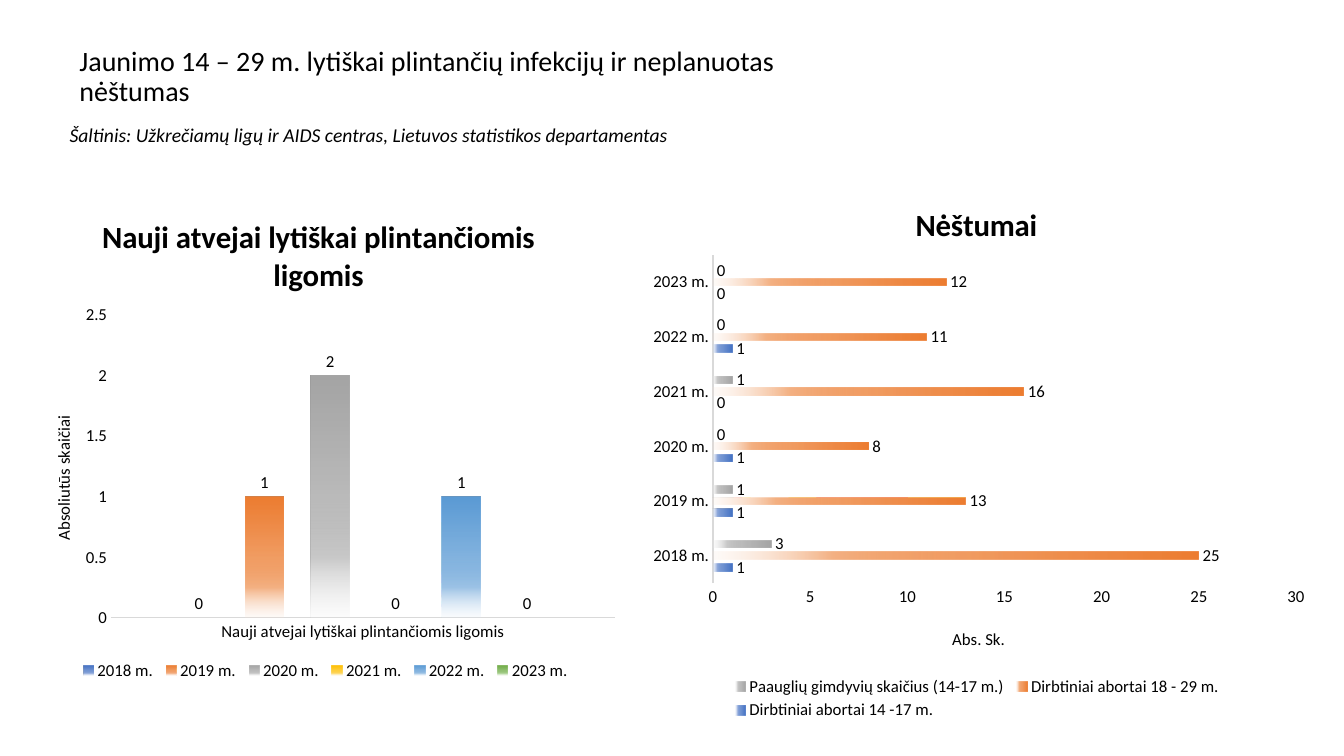
from lxml import etree
from pptx import Presentation
from pptx.chart.data import CategoryChartData
from pptx.dml.color import RGBColor
from pptx.enum.chart import XL_CHART_TYPE, XL_LABEL_POSITION, XL_LEGEND_POSITION, XL_TICK_MARK
from pptx.enum.text import MSO_ANCHOR
from pptx.oxml import parse_xml
from pptx.oxml.ns import qn
from pptx.util import Pt

COLUMN = XL_CHART_TYPE.COLUMN_CLUSTERED
BAR = XL_CHART_TYPE.BAR_CLUSTERED
NO_TICK = XL_TICK_MARK.NONE
OUTSIDE = XL_LABEL_POSITION.OUTSIDE_END
BOTTOM = XL_LEGEND_POSITION.BOTTOM
MIDDLE = MSO_ANCHOR.MIDDLE

FACE = "Calibri"
COLORS = {"ink": "000000", "axis": "D9D9D9"}
# Gradient colours: full, mid, pale
FADES = {
    "blue": ("4472C4", "8FAADC", "DAE3F3"),
    "orange": ("ED7D31", "F4B183", "FBE5D6"),
    "grey": ("A5A5A5", "C9C9C9", "EDEDED"),
    "gold": ("FFC000", "FFD966", "FFF2CC"),
    "sky": ("5B9BD5", "9DC3E6", "DEEBF7"),
    "green": ("70AD47", "A9D18E", "E2F0D9"),
}

TITLE = "Jaunimo 14 – 29 m. lytiškai plintančių infekcijų ir neplanuotas nėštumas"
SOURCE = "Šaltinis: Užkrečiamų ligų ir AIDS centras, Lietuvos statistikos departamentas"
YEARS = [f"{year} m." for year in range(2018, 2024)]
CASES = "Nauji atvejai lytiškai plintančiomis ligomis"

# Boxes and spots are in slide points
CHARTS = [
    {
        "kind": COLUMN, "box": (18, 132.5, 429.8, 358.6),
        "title": CASES, "title_at": (69, 150),
        "axis": "Absoliutūs skaičiai", "axis_at": (35, 295), "turn": -90,
        "plot": (79.3, 225, 360, 216.5), "legend": (54, 472, 357, 17),
        "cats": [CASES], "top": 2.5, "step": 0.5,
        "gap": 355, "overlap": -70, "line": 0.75, "angle": 90,
        "series": [(year, [value], hue)
                   for year, value, hue in zip(YEARS, (0, 1, 2, 0, 1, 0), FADES)],
    },
    {
        "kind": BAR, "box": (454.3, 122.4, 487.4, 395.3),
        "title": "Nėštumai", "title_at": (650, 141),
        "axis": "Abs. Sk.", "axis_at": (678, 446), "turn": 0,
        "plot": (509.3, 182, 416.5, 234.5), "legend": (520, 481, 356, 36),
        "cats": YEARS, "top": 30, "step": 5,
        "gap": 326, "overlap": -58, "line": 1.5, "angle": 180,
        "series": [
            ("Dirbtiniai abortai 14 -17 m.", [1, 1, 1, 0, 1, 0], "blue"),
            ("Dirbtiniai abortai 18 - 29 m.", [25, 13, 8, 16, 11, 12], "orange"),
            ("Paauglių gimdyvių skaičius (14-17 m.)", [3, 1, 0, 1, 0, 0], "grey"),
        ],
    },
]


def style(font, size=12, bold=False, italic=False):
    font.name, font.size = FACE, Pt(size)
    font.bold, font.italic = bold, italic
    font.color.rgb = RGBColor.from_string(COLORS["ink"])


def write(frame, text, spacing=None, **look):
    para = frame.paragraphs[0]
    if spacing:
        para.line_spacing = spacing
    run = para.add_run()
    run.text = text
    style(run.font, **look)


def add_text(slide, box, text, pad=(0, 0), **look):
    frame = slide.shapes.add_textbox(*map(Pt, box)).text_frame
    frame.word_wrap = True
    frame.vertical_anchor = MIDDLE
    frame.margin_left = frame.margin_right = Pt(pad[0])
    frame.margin_top = frame.margin_bottom = Pt(pad[1])
    write(frame, text, **look)


def place(part, index, spot, box, inner=False):
    """Fix a chart part at a slide position, as shares of the chart box."""
    for old in part.findall(qn("c:layout")):
        part.remove(old)
    layout = etree.Element(qn("c:layout"))
    manual = etree.SubElement(layout, qn("c:manualLayout"))
    left, top, width, height = box
    shares = [(spot[0] - left) / width, (spot[1] - top) / height]
    if len(spot) == 4:
        shares += [spot[2] / width, spot[3] / height]
    items = [("layoutTarget", "inner")] if inner else []
    items += [("xMode", "edge"), ("yMode", "edge")]
    items += [(key, f"{share:.4f}") for key, share in zip("xywh", shares)]
    for tag, value in items:
        etree.SubElement(manual, qn(f"c:{tag}")).set("val", value)
    part.insert(index, layout)


def fade(series, hue, angle):
    full, mid, pale = FADES[hue]
    stops = ((0, full, 100), (51, full, 75), (75, mid, 100), (100, pale, 15))
    marks = "".join(
        f'<a:gs pos="{pos * 1000}"><a:srgbClr val="{color}">'
        f'<a:alpha val="{alpha * 1000}"/></a:srgbClr></a:gs>'
        for pos, color, alpha in stops)
    series.format.line.fill.background()
    series.format.fill.background()
    props = series.format.fill._xPr
    props.replace(props.find(qn("a:noFill")), parse_xml(
        '<a:gradFill xmlns:a="http://schemas.openxmlformats.org/drawingml/2006/main" '
        f'rotWithShape="1"><a:gsLst>{marks}</a:gsLst>'
        f'<a:lin ang="{angle * 60000}" scaled="0"/></a:gradFill>'))


def add_graph(slide, item):
    box = item["box"]
    data = CategoryChartData()
    data.categories = item["cats"]
    for name, values, _ in item["series"]:
        data.add_series(name, values)
    chart = slide.shapes.add_chart(item["kind"], *map(Pt, box), data).chart
    style(chart.font)

    chart.has_title = True
    write(chart.chart_title.text_frame, item["title"], size=22, bold=True)
    place(chart.chart_title._element, 1, item["title_at"], box)
    chart.has_legend = True
    chart.legend.position = BOTTOM
    chart.legend.include_in_layout = False
    style(chart.legend.font)
    place(chart.legend._element, 1, item["legend"], box)
    place(chart._chartSpace.chart.plotArea, 0, item["plot"], box, inner=True)

    cat, val = chart.category_axis, chart.value_axis
    for axis in (cat, val):
        axis.major_tick_mark = axis.minor_tick_mark = NO_TICK
        axis.has_major_gridlines = False
        style(axis.tick_labels.font)
    cat.format.line.color.rgb = RGBColor.from_string(COLORS["axis"])
    cat.format.line.width = Pt(item["line"])
    val.format.line.fill.background()
    val.minimum_scale, val.maximum_scale = 0, item["top"]
    val.major_unit = item["step"]
    frame = val.axis_title.text_frame
    write(frame, item["axis"])
    frame._txBody.bodyPr.set("rot", str(item["turn"] * 60000))
    place(val.axis_title._element, 1, item["axis_at"], box)

    plot = chart.plots[0]
    plot.vary_by_categories = False
    plot.gap_width, plot.overlap = item["gap"], item["overlap"]
    for series, (_, _, hue) in zip(plot.series, item["series"]):
        fade(series, hue, item["angle"])
        labels = series.data_labels
        labels.show_value = True
        labels.position = OUTSIDE
        style(labels.font)


def main():
    deck = Presentation()
    deck.slide_width, deck.slide_height = Pt(960), Pt(540)
    slide = deck.slides.add_slide(deck.slide_layouts[6])
    add_text(slide, (49.7, 22.3, 535.7, 65.5), TITLE, pad=(7.2, 3.6), size=20, spacing=0.9)
    for item in CHARTS:
        add_graph(slide, item)
    add_text(slide, (49.7, 87.8, 861, 17.3), SOURCE, size=14, italic=True)
    deck.save("out.pptx")


if __name__ == "__main__":
    main()
